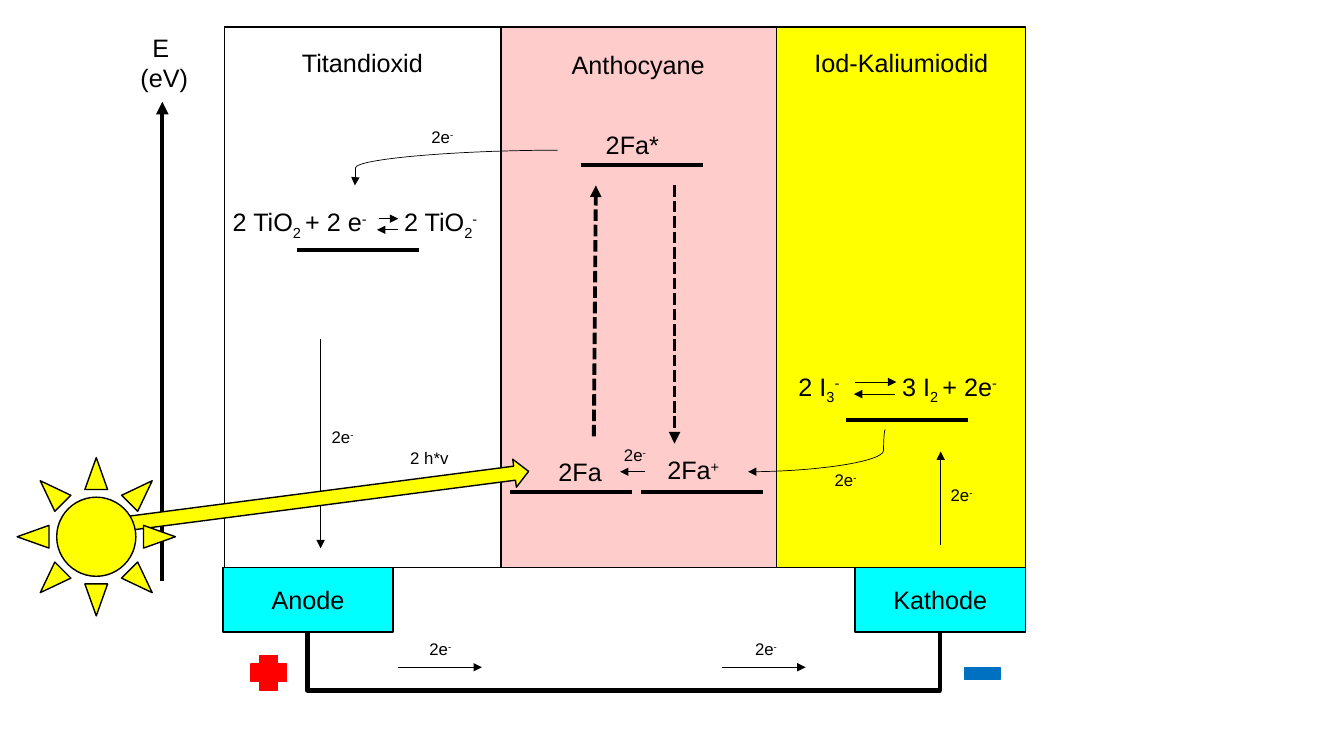
from dataclasses import dataclass

import pptx
import pptx.dml.color
import pptx.enum.shapes
import pptx.enum.text
import pptx.oxml
import pptx.oxml.ns
import pptx.util

EMU_PER_PX = 9144  # 100 px to the inch
COLOURS = {
    "black": "000000", "white": "FFFFFF", "pink": "FFCCCC", "yellow": "FFFF00",
    "cyan": "00FFFF", "red": "FF0000", "blue": "0070C0",
}
SUB, SUPER = -25000, 30000
KIND = pptx.enum.shapes.MSO_SHAPE
ALIGN = pptx.enum.text.PP_ALIGN
Run = tuple[str, int]
Box = tuple[int, int, int, int]


@dataclass
class Block:
    box: Box
    fill: str | None
    line: str = "black"
    kind: KIND = KIND.RECTANGLE
    weight: float = 1
    rotation: float = 0
    text: str = ""


@dataclass
class Stroke:
    start: tuple[int, int]
    end: tuple[int, int]
    weight: float = 0.5
    arrow: bool = True
    dash: str = ""
    bend: int | None = None


@dataclass
class Label:
    box: Box
    paragraphs: list[list[Run]]
    size: int = 18
    centred: bool = False
    tab: int = 0


def px(length: int) -> pptx.util.Emu:
    return pptx.util.Emu(length * EMU_PER_PX)


def rgb(name: str) -> pptx.dml.color.RGBColor:
    return pptx.dml.color.RGBColor.from_string(COLOURS[name])


def add_xml(parent, tag: str, **attributes: str):
    element = pptx.oxml.parse_xml(f"<a:{tag} {pptx.oxml.ns.nsdecls('a')}/>")
    for key, value in attributes.items():
        element.set(key, value)
    parent.append(element)
    return element


def add_run(paragraph, text: str, size: int, baseline: int = 0) -> None:
    run = paragraph.add_run()
    run.text = text
    run.font.size = pptx.util.Pt(size)
    run.font.name = "Arial"
    run.font.color.rgb = rgb("black")
    if baseline:
        run._r.get_or_add_rPr().set("baseline", str(baseline))


def draw_block(slide, block: Block) -> None:
    shape = slide.shapes.add_shape(block.kind, *map(px, block.box))
    shape.shadow.inherit = False
    shape.rotation = block.rotation
    if block.fill:
        shape.fill.solid()
        shape.fill.fore_color.rgb = rgb(block.fill)
    else:
        shape.fill.background()
    shape.line.color.rgb = rgb(block.line)
    shape.line.width = pptx.util.Pt(block.weight)
    if block.text:
        shape.text_frame.vertical_anchor = pptx.enum.text.MSO_ANCHOR.MIDDLE
        paragraph = shape.text_frame.paragraphs[0]
        paragraph.alignment = ALIGN.CENTER
        add_run(paragraph, block.text, 18)


def draw_stroke(slide, stroke: Stroke) -> None:
    """Draw a line; bend is where a curve turns, in 1/100000 of its width."""
    kinds = pptx.enum.shapes.MSO_CONNECTOR
    kind = kinds.STRAIGHT if stroke.bend is None else kinds.CURVE
    connector = slide.shapes.add_connector(kind, *map(px, stroke.start + stroke.end))
    connector.line.color.rgb = rgb("black")
    connector.line.width = pptx.util.Pt(stroke.weight)
    properties = connector._element.spPr
    if stroke.bend is not None:
        guides = properties.find(".//" + pptx.oxml.ns.qn("a:avLst"))
        add_xml(guides, "gd", name="adj1", fmla=f"val {stroke.bend}")
    outline = connector.line._get_or_add_ln()
    if stroke.dash:
        add_xml(outline, "prstDash", val=stroke.dash)
    if stroke.arrow:
        add_xml(outline, "tailEnd", type="triangle")
    add_xml(properties, "effectLst")


def draw_label(slide, label: Label) -> None:
    frame = slide.shapes.add_textbox(*map(px, label.box)).text_frame
    frame.word_wrap = True
    for index, runs in enumerate(label.paragraphs):
        paragraph = frame.add_paragraph() if index else frame.paragraphs[0]
        paragraph.alignment = ALIGN.CENTER if label.centred else ALIGN.LEFT
        if label.tab:
            stops = add_xml(paragraph._p.get_or_add_pPr(), "tabLst")
            add_xml(stops, "tab", pos=str(px(label.tab)), algn="l")
        for text, baseline in runs:
            add_run(paragraph, text, label.size, baseline)


PANELS = [
    Block((497, 27, 273, 536), "pink"),
    Block((223, 27, 274, 536), "white"),
    Block((770, 27, 247, 536), "yellow"),
]
CIRCUIT = [
    Block((305, 576, 627, 109), None, weight=3),
    Block((221, 563, 169, 64), "cyan", text="Anode"),
    Block((848, 563, 169, 64), "cyan", text="Kathode"),
    Block((391, 568, 455, 50), "white", "white"),
    Block((249, 650, 35, 35), "red", "red", KIND.CROSS),
    Block((957, 662, 35, 12), "blue", "blue"),
]
SUNLIGHT = [
    Block((101, 481, 425, 28), "yellow", kind=KIND.RIGHT_ARROW, rotation=352.6),
    Block((17, 454, 157, 157), "yellow", kind=KIND.SUN),
]

ENERGY_AXIS = Stroke((161, 576), (161, 101), weight=3)
LEVEL_WIDTH = 121
LEVELS = [
    Stroke((x, y), (x + LEVEL_WIDTH, y), weight=3, arrow=False)
    for x, y in [(506, 488), (576, 164), (295, 248), (839, 417), (636, 488)]
]
EXCITATION = [
    Stroke((589, 433), (591, 184), weight=2.75, dash="sysDash"),
    Stroke((669, 184), (669, 440), weight=2.75, dash="sysDash"),
]
EQUILIBRIUM = [
    Stroke((848, 379), (889, 379)),
    Stroke((888, 391), (847, 391)),
    Stroke((376, 217), (395, 217)),
    Stroke((395, 228), (374, 228)),
]
ELECTRON_FLOW = [
    Stroke((878, 426), (742, 468), bend=1200),
    Stroke((553, 149), (352, 184), bend=99700),
    Stroke((640, 468), (615, 468)),
    Stroke((395, 662), (478, 662)),
    Stroke((716, 662), (799, 662)),
    Stroke((318, 336), (318, 544)),
    Stroke((933, 541), (933, 448)),
]

HEADINGS = [
    Label((126, 27, 74, 71), [[("E ", 0)], [("(eV)", 0)]], centred=True),
    Label((497, 44, 272, 40), [[("Anthocyane", 0)]], centred=True),
    Label((223, 42, 273, 40), [[("Titandioxid", 0)]], centred=True),
    Label((771, 42, 246, 40), [[("Iod-Kaliumiodid", 0)]], centred=True),
]
SPECIES = [
    Label((591, 123, 90, 40), [[("2Fa*", 0)]]),
    Label((544, 448, 90, 40), [[("2Fa", 0)]]),
    Label((652, 446, 90, 40), [[("2Fa", 0), ("+", SUPER)]]),
    Label((782, 363, 224, 40), [[
        ("2 I", 0), ("3", SUB), ("-", SUPER), ("\t3 I", 0),
        ("2 ", SUB), ("+ 2e", 0), ("-", SUPER)]], tab=103),
    Label((221, 200, 271, 40), [[
        ("2 TiO", 0), ("2 ", SUB), ("+ 2 e", 0), ("-", SUPER),
        ("\t2 TiO", 0), ("2", SUB), ("-", SUPER)]], tab=170),
]
ELECTRONS = [
    Label((x, y, 59, 30), [[("2e", 0), ("-", SUPER)]], size=12)
    for x, y in [(319, 418), (416, 629), (739, 629), (933, 476),
                 (818, 461), (418, 121), (609, 436)]
]
PHOTONS = Label((397, 439, 62, 30), [[("2 h*v", 0)]], size=12)


def main() -> None:
    presentation = pptx.Presentation()
    presentation.slide_width, presentation.slide_height = px(1333), px(750)
    slide = presentation.slides.add_slide(presentation.slide_layouts[6])
    for block in PANELS + CIRCUIT:
        draw_block(slide, block)
    for stroke in [ENERGY_AXIS, *LEVELS, *EXCITATION, *EQUILIBRIUM, *ELECTRON_FLOW]:
        draw_stroke(slide, stroke)
    for label in [*HEADINGS, *SPECIES, *ELECTRONS, PHOTONS]:
        draw_label(slide, label)
    for block in SUNLIGHT:
        draw_block(slide, block)
    presentation.save("out.pptx")


if __name__ == "__main__":
    main()
